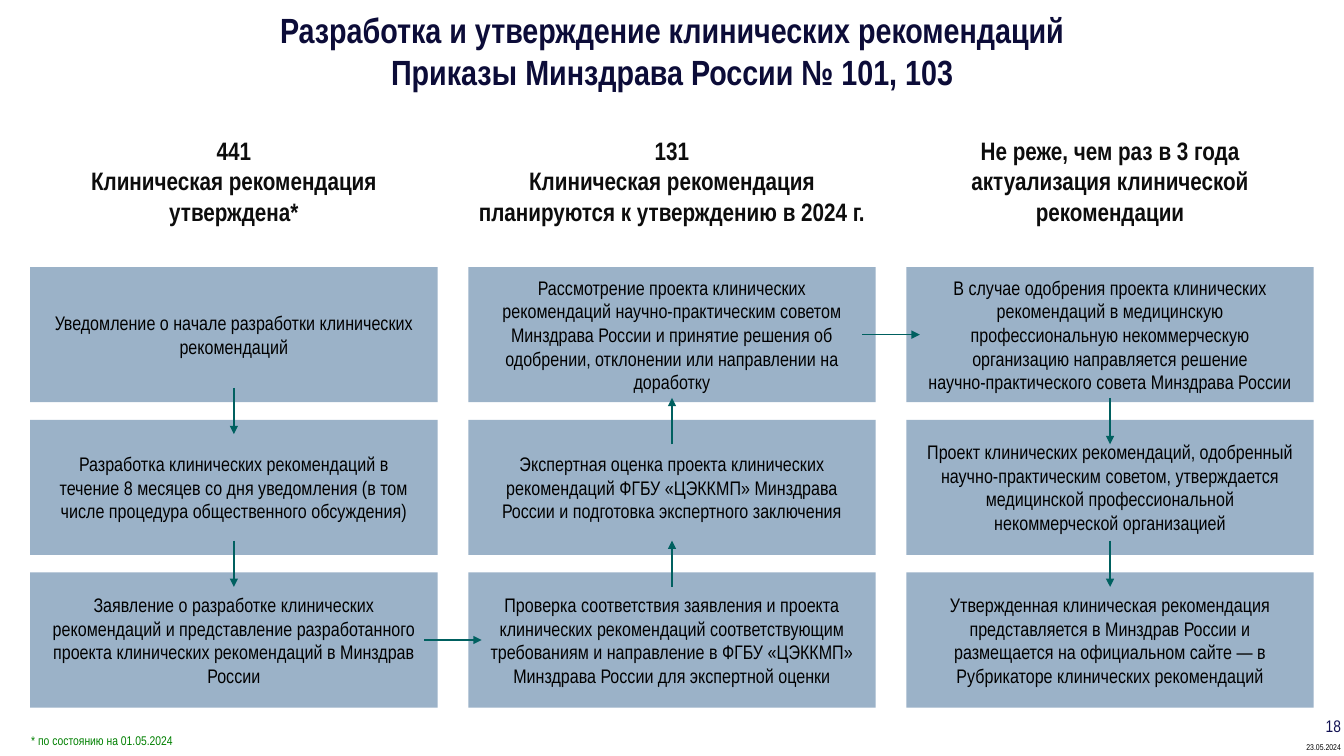
from lxml.etree import SubElement
from pptx import Presentation
from pptx.dml.color import RGBColor
from pptx.enum.shapes import MSO_CONNECTOR, MSO_SHAPE
from pptx.enum.text import MSO_ANCHOR, PP_ALIGN
from pptx.oxml.ns import qn
from pptx.util import Inches, Pt

FONT = "Arial Narrow"
BLACK = RGBColor(0x00, 0x00, 0x00)
TITLE_NAVY = RGBColor(0x0C, 0x0C, 0x38)
NUMBER_NAVY = RGBColor(0x13, 0x13, 0x54)
HEADING = RGBColor(0x0D, 0x0D, 0x0D)
BOX_BLUE = RGBColor(0x9B, 0xB2, 0xC8)
ARROW_TEAL = RGBColor(0x00, 0x60, 0x60)
NOTE_GREEN = RGBColor(0x00, 0x80, 0x00)

# Grid of three columns and three rows
SLIDE_W, SLIDE_H = 13.33, 7.5
MARGIN, TOP, BOTTOM = 0.3, 2.65, 7.02
BOX_W, BOX_H = 4.04, 1.34
COL_GAP = (SLIDE_W - 2 * MARGIN - 3 * BOX_W) / 2
ROW_GAP = (BOTTOM - TOP - 3 * BOX_H) / 2
COLS = [MARGIN + i * (BOX_W + COL_GAP) for i in range(3)]
ROWS = [TOP + i * (BOX_H + ROW_GAP) for i in range(3)]

# Per column: heading top, heading height, heading paragraphs, step texts
COLUMNS = [
    (1.26, 1.07, ["441", "Клиническая рекомендация утверждена*"], [
        "Уведомление о начале разработки клинических рекомендаций",
        "Разработка клинических рекомендаций в течение 8 месяцев со дня "
        "уведомления (в том числе процедура общественного обсуждения)",
        "Заявление о разработке клинических рекомендаций и представление "
        "разработанного проекта клинических рекомендаций в Минздрав России",
    ]),
    (1.11, 1.37, ["131", "Клиническая рекомендация планируются "
                         "к утверждению в 2024 г."], [
        "Рассмотрение проекта клинических рекомендаций научно-практическим "
        "советом Минздрава России и принятие решения об одобрении, "
        "отклонении или направлении на доработку",
        "Экспертная оценка проекта клинических рекомендаций ФГБУ «ЦЭККМП» "
        "Минздрава России и подготовка экспертного заключения",
        "Проверка соответствия заявления и проекта клинических рекомендаций "
        "соответствующим требованиям и направление в ФГБУ «ЦЭККМП» "
        "Минздрава России для экспертной оценки",
    ]),
    (1.26, 1.07, ["Не реже, чем раз в 3 года актуализация клинической "
                  "рекомендации"], [
        "В случае одобрения проекта клинических рекомендаций в медицинскую "
        "профессиональную некоммерческую организацию направляется решение "
        "научно‑практического совета Минздрава России",
        "Проект клинических рекомендаций, одобренный научно-практическим "
        "советом, утверждается медицинской профессиональной некоммерческой "
        "организацией",
        "Утвержденная клиническая рекомендация представляется "
        "в Минздрав России и размещается на официальном сайте — "
        "в Рубрикаторе клинических рекомендаций",
    ]),
]

# Vertical arrows: column, row above the gap, direction, shift down
DOWN, UP = 1, -1
VERTICAL_ARROWS = [
    (0, 0, DOWN, 0), (0, 1, DOWN, 0),
    (1, 0, UP, 0.1), (1, 1, UP, 0),
    (2, 0, DOWN, 0.1), (2, 1, DOWN, 0),
]
# Horizontal arrows: column left of the gap, row
HORIZONTAL_ARROWS = [(0, 2), (1, 0)]


class Deck:
    def __init__(self):
        self.prs = Presentation()
        self.prs.slide_width = Inches(SLIDE_W)
        self.prs.slide_height = Inches(SLIDE_H)
        self.s = self.prs.slides.add_slide(self.prs.slide_layouts[6])

    def fill_text(self, sp, paragraphs, size, color, bold=False,
                  align=PP_ALIGN.CENTER, anchor=MSO_ANCHOR.MIDDLE,
                  insets=(0.08, 0.08, 0.08, 0.08), wrap=True):
        tf = sp.text_frame
        tf.word_wrap = wrap
        tf.vertical_anchor = anchor
        (tf.margin_left, tf.margin_top,
         tf.margin_right, tf.margin_bottom) = map(Inches, insets)
        for i, text in enumerate(paragraphs):
            p = tf.add_paragraph() if i else tf.paragraphs[0]
            p.text = text
            p.alignment = align
            p.font.name = FONT
            p.font.size = Pt(size)
            p.font.bold = bold
            p.font.color.rgb = color

    def text(self, x, y, w, h, paragraphs, size, color, **style):
        sp = self.s.shapes.add_textbox(*map(Inches, (x, y, w, h)))
        self.fill_text(sp, paragraphs, size, color, **style)

    def box(self, x, y, text):
        sp = self.s.shapes.add_shape(
            MSO_SHAPE.RECTANGLE, *map(Inches, (x, y, BOX_W, BOX_H)))
        sp.shadow.inherit = False
        sp.fill.solid()
        sp.fill.fore_color.rgb = BOX_BLUE
        sp.line.fill.background()
        self.fill_text(sp, [text], 14, BLACK, insets=(0.2, 0.08, 0.2, 0.08))

    def arrow(self, x, y, dx, dy):
        """Draw an arrow of extent (dx, dy) centred on (x, y)."""
        ends = (x - dx / 2, y - dy / 2, x + dx / 2, y + dy / 2)
        c = self.s.shapes.add_connector(
            MSO_CONNECTOR.STRAIGHT, *map(Inches, ends))
        c.line.color.rgb = ARROW_TEAL
        c.line.width = Pt(1)
        props = c.element.spPr
        SubElement(props.find(qn("a:ln")), qn("a:tailEnd"), type="triangle")
        SubElement(props, qn("a:effectLst"))


def main():
    deck = Deck()

    # Title
    deck.text(0.17, 0, 12.99, 1,
              ["Разработка и утверждение клинических рекомендаций\n"
               "Приказы Минздрава России № 101, 103"],
              25, TITLE_NAVY, bold=True)

    # Column headings and steps
    for x, (top, height, heading, steps) in zip(COLS, COLUMNS):
        deck.text(x, top, BOX_W, height, heading, 18, HEADING, bold=True)
        for y, step in zip(ROWS, steps):
            deck.box(x, y, step)

    # Arrows
    for col, row, direction, shift in VERTICAL_ARROWS:
        deck.arrow(COLS[col] + BOX_W / 2,
                   ROWS[row] + BOX_H + ROW_GAP / 2 + shift,
                   0, 0.46 * direction)
    for col, row in HORIZONTAL_ARROWS:
        deck.arrow(COLS[col] + BOX_W + COL_GAP / 2,
                   ROWS[row] + BOX_H / 2, 0.57, 0)

    # Footnote, slide number and date
    deck.text(0.11, 7.19, 12.8, 0.31, ["* по состоянию на 01.05.2024"],
              9, NOTE_GREEN, align=PP_ALIGN.LEFT, anchor=MSO_ANCHOR.TOP,
              insets=(0.2, 0.08, 0.08, 0.08))
    deck.text(12.91, 7.06, 0.43, 0.24, ["18"], 12, NUMBER_NAVY,
              align=PP_ALIGN.RIGHT, insets=(0.04, 0.04, 0.04, 0))
    deck.text(12.91, 7.32, 0.43, 0.18, ["23.05.2024"], 6, BLACK,
              align=PP_ALIGN.RIGHT, anchor=MSO_ANCHOR.TOP,
              insets=(0.04, 0.04, 0.04, 0.04), wrap=False)

    deck.prs.save("out.pptx")


if __name__ == "__main__":
    main()
